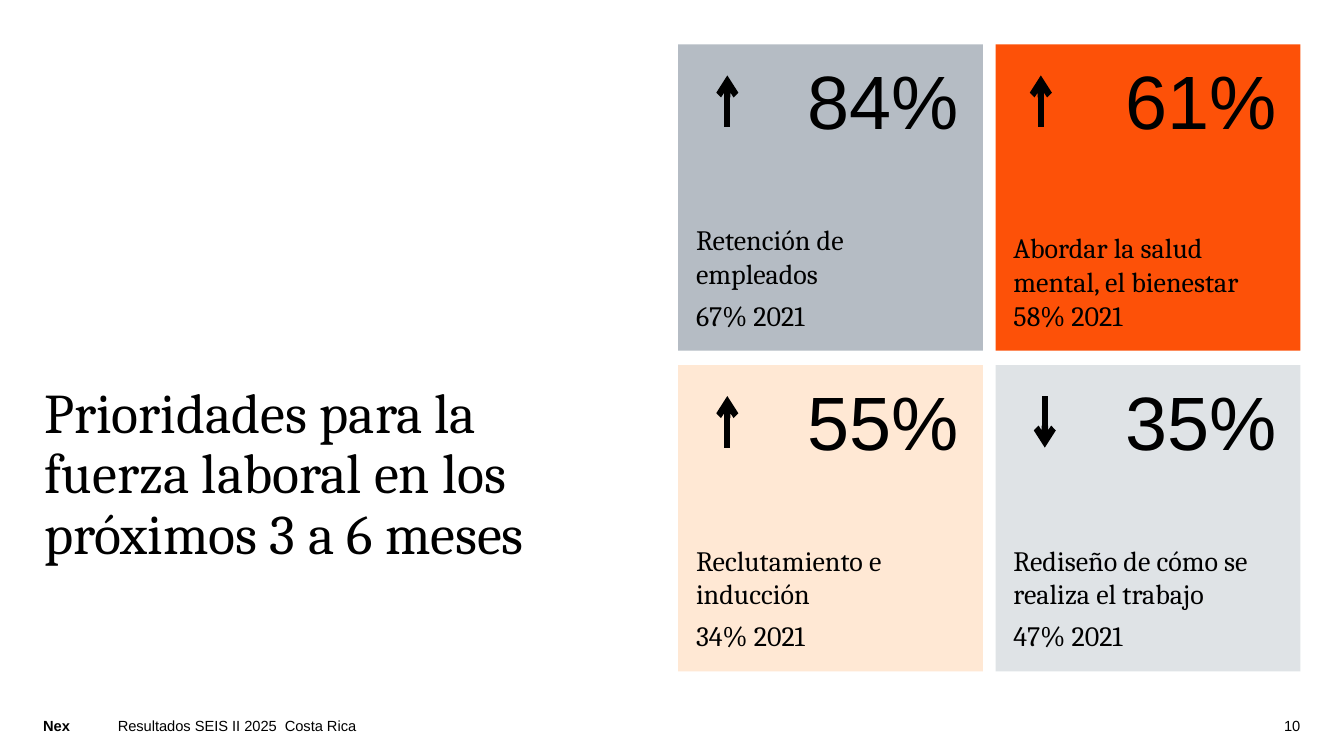
from dataclasses import dataclass

from lxml import etree
from pptx import Presentation
from pptx import util as u
from pptx.dml.color import RGBColor
from pptx.enum import shapes, text
from pptx.oxml import ns


@dataclass(frozen=True)
class Theme:
    ink: str = "000000"
    serif: str = "Cambria"
    sans: str = "Arial"
    title: float = 40
    figure: float = 54
    caption: float = 20
    footer: float = 10.5
    arrow: float = 4.5


@dataclass(frozen=True)
class Priority:
    fill: str
    figure: str
    caption: str
    rising: bool = True
    arrow_x: float = 1.24


THEME = Theme()
PRIORITIES = [
    Priority("B5BCC4", "84%", "Retención de empleados\n67% 2021"),
    Priority("FD5108", "61%", "Abordar la salud mental, el bienestar 58% 2021", arrow_x=1.14),
    Priority("FFE8D4", "55%", "Reclutamiento e inducción\n34% 2021"),
    Priority("DFE3E6", "35%", "Rediseño de cómo se realiza el trabajo\n47% 2021", rising=False),
]


def place(part, left, top, width, height):
    part.left, part.top = u.Cm(left), u.Cm(top)
    part.width, part.height = u.Cm(width), u.Cm(height)


def write(part, words, size, font, align=text.PP_ALIGN.LEFT, anchor=text.MSO_ANCHOR.TOP,
          insets=(0, 0, 0, 0), bold=False, before=0, after=0, spacing=1.0):
    frame = part.text_frame
    frame.text = words
    frame.word_wrap = True
    frame.auto_size = text.MSO_AUTO_SIZE.NONE
    frame.vertical_anchor = anchor
    (frame.margin_left, frame.margin_top,
     frame.margin_right, frame.margin_bottom) = map(u.Cm, insets)
    for paragraph in frame.paragraphs:
        paragraph.alignment = align
        paragraph.line_spacing = spacing
        paragraph.space_before, paragraph.space_after = u.Pt(before), u.Pt(after)
        for run in paragraph.runs:
            run.font.size, run.font.name, run.font.bold = u.Pt(size), font, bold
            run.font.color.rgb = RGBColor.from_string(THEME.ink)


def remove_bullets(part):
    for paragraph in part.text_frame.paragraphs:
        properties = paragraph._p.get_or_add_pPr()
        properties.set("marL", "0")
        properties.set("indent", "0")
        etree.SubElement(properties, ns.qn("a:buNone"))


def add_trend_arrow(slide, x, top, height, rising):
    start, tip = (top + height, top) if rising else (top, top + height)
    arrow = slide.shapes.add_connector(
        shapes.MSO_CONNECTOR.STRAIGHT, u.Cm(x), u.Cm(start), u.Cm(x), u.Cm(tip))
    arrow.line.color.rgb = RGBColor.from_string(THEME.ink)
    arrow.line.width = u.Pt(THEME.arrow)
    etree.SubElement(arrow.line._get_or_add_ln(), ns.qn("a:tailEnd"), type="arrow")
    etree.SubElement(arrow._element.spPr, ns.qn("a:effectLst"))


def add_priority_card(slide, caption, priority, left, top, width, height):
    card = slide.shapes.add_shape(
        shapes.MSO_SHAPE.RECTANGLE, u.Cm(left), u.Cm(top), u.Cm(width), u.Cm(height))
    card.shadow.inherit = False
    card.fill.solid()
    card.fill.fore_color.rgb = RGBColor.from_string(priority.fill)
    card.line.fill.background()
    write(card, priority.figure, THEME.figure, THEME.sans, align=text.PP_ALIGN.RIGHT,
          insets=(0.76, 0.25, 0.6, 0), before=3, after=12)

    slide.shapes._spTree.append(caption._element)
    place(caption, left + 0.45, top + 3.5, width - 0.8, height - 3.98)
    write(caption, priority.caption, THEME.caption, THEME.serif,
          anchor=text.MSO_ANCHOR.BOTTOM, after=6)
    remove_bullets(caption)

    add_trend_arrow(slide, left + priority.arrow_x, top + 0.78, 1.3, priority.rising)


def add_priority_grid(slide, captions, left, top, card_width, card_height, gap_x, gap_y):
    for index, (caption, priority) in enumerate(zip(captions, PRIORITIES)):
        row, column = divmod(index, 2)
        add_priority_card(slide, caption, priority,
                          left + column * (card_width + gap_x),
                          top + row * (card_height + gap_y),
                          card_width, card_height)


def add_title(slide, left, top, width, height):
    title = slide.shapes.title
    place(title, left, top, width, height)
    write(title, "Prioridades para la fuerza laboral en los próximos 3 a 6 meses",
          THEME.title, THEME.serif, spacing=0.9)


def add_footer(slide, left, top, width, height):
    entries = [
        ("Nex", 0, 1.6, text.PP_ALIGN.LEFT, True),
        ("Resultados SEIS II 2025  Costa Rica", 1.88, 24.5, text.PP_ALIGN.LEFT, False),
        ("10", width - 0.84, 0.84, text.PP_ALIGN.RIGHT, False),
    ]
    for words, offset, entry_width, align, bold in entries:
        entry = slide.shapes.add_textbox(
            u.Cm(left + offset), u.Cm(top), u.Cm(entry_width), u.Cm(height))
        write(entry, words, THEME.footer, THEME.sans, align=align, bold=bold,
              anchor=text.MSO_ANCHOR.BOTTOM)


def main():
    deck = Presentation()
    deck.slide_width, deck.slide_height = u.Cm(33.87), u.Cm(19.05)
    slide = deck.slides.add_slide(deck.slide_layouts[4])
    captions = [part for part in slide.placeholders if part.placeholder_format.idx > 0]
    add_title(slide, 1.12, 9.7, 14.55, 6.81)
    add_priority_grid(slide, captions, 17.09, 1.12, 7.68, 7.72, 0.32, 0.36)
    add_footer(slide, 1.09, 18.06, 31.68, 0.46)
    deck.save("out.pptx")


if __name__ == "__main__":
    main()
